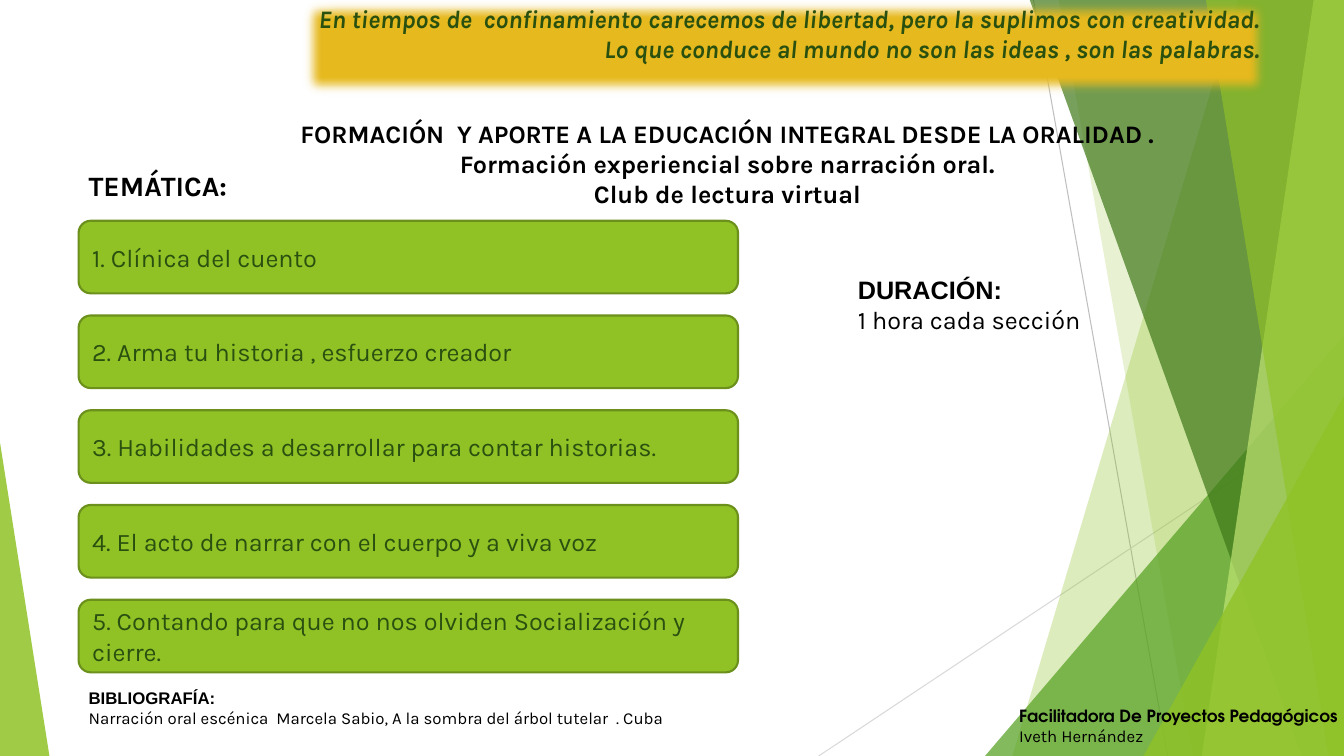
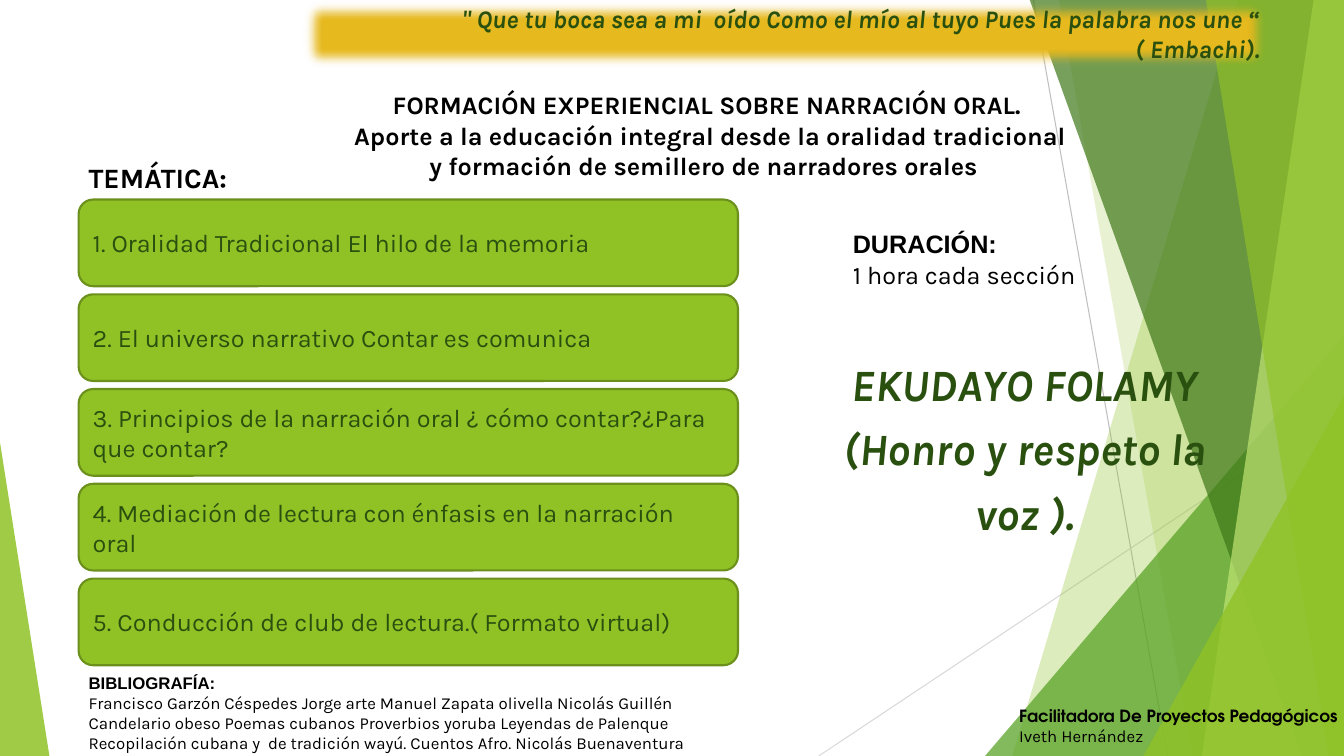
from lxml.etree import SubElement
from pptx import Presentation
from pptx.dml.color import RGBColor
from pptx.enum.shapes import MSO_CONNECTOR, MSO_SHAPE
from pptx.enum.text import MSO_ANCHOR, MSO_AUTO_SIZE, PP_ALIGN
from pptx.oxml.ns import qn
from pptx.util import Pt

PX = 9144  # EMU in one px, 100 px to the inch
WIDE, HIGH = 1333, 750

COLORS = {
    "lime": "90C226", "leaf": "54A021", "forest": "3F7819", "pale": "C0E474",
    "edge": "6B901C", "deep": "2A5010", "gold": "E6B91E", "white": "FFFFFF",
    "black": "000000", "gray": "BFBFBF", "mist": "D9D9D9",
}

STYLES = {
    "quote": {"name": "Karla", "size": Pt(18), "bold": True, "italic": True},
    "title": {"name": "Karla", "size": Pt(18), "bold": True},
    "topic": {"name": "Karla", "size": Pt(20), "bold": True},
    "item": {"name": "Karla", "size": Pt(18)},
    "motto": {"name": "Karla", "size": Pt(32), "bold": True, "italic": True},
    "head": {"name": "Arial", "size": Pt(18), "bold": True},
    "small": {"name": "Karla", "size": Pt(12)},
    "smallhead": {"name": "Arial", "size": Pt(12), "bold": True},
    "role": {"name": "TeX Gyre Adventor", "size": Pt(12), "bold": True},
}

# Straight lines: start, end, colour
LINES = [((1025, 0), (1158, 750), "gray"), ((1333, 403), (812, 750), "mist")]

# Panels reach the right edge: ("panel", top x, bottom x, colour, opacity)
# Wedges stand on the bottom edge: ("wedge", left, top, width, apex, colour, opacity)
FACETS = [
    ("panel", 1228, 1004, "lime", 30),
    ("panel", 1050, 1183, "lime", 20),
    ("wedge", 977, 333, 356, 1, "leaf", 72),
    ("panel", 1021, 1291, "forest", 70),
    ("panel", 1303, 1192, "pale", 70),
    ("panel", 1196, 1318, "lime", 65),
    ("wedge", 1134, 393, 199, 1, "lime", 80),
    ("wedge", 0, 439, 49, 0, "lime", 85),
]

SLIDES = [
    {
        "quote": ["En tiempos de  confinamiento carecemos de libertad, pero la suplimos con creatividad.",
                  "Lo que conduce al mundo no son las ideas , son las palabras."],
        "band": 98,
        "title": ["FORMACIÓN  Y APORTE A LA EDUCACIÓN INTEGRAL DESDE LA ORALIDAD .",
                  "Formación experiencial sobre narración oral.",
                  "Club de lectura virtual"],
        "title_at": (285, 112, 873, 101),
        "topic_top": 162,
        "items": ["1. Clínica del cuento",
                  "2. Arma tu historia , esfuerzo creador",
                  "3. Habilidades a desarrollar para contar historias.",
                  "4. El acto de narrar con el cuerpo y a viva voz",
                  "5. Contando para que no nos olviden Socialización y cierre."],
        "items_top": 219, "item_high": 72,
        "time_at": (841, 267, 285, 71),
        "books": "Narración oral escénica  Marcela Sabio, A la sombra del árbol tutelar  . Cuba",
        "books_at": (78, 677, 625, 50),
    },
    {
        "quote": ["\" Que tu boca sea a mi  oído Como el mío al tuyo Pues la palabra nos une “",
                  "( Embachi)."],
        "band": 72,
        "title": ["FORMACIÓN EXPERIENCIAL SOBRE NARRACIÓN ORAL.",
                  " Aporte a la educación integral desde la oralidad tradicional ",
                  "y formación de semillero de narradores orales "],
        "title_at": (335, 84, 732, 101),
        "topic_top": 154,
        "items": ["1. Oralidad Tradicional El hilo de la memoria",
                  "2. El universo narrativo Contar es comunica",
                  "3. Principios de la narración oral ¿ cómo contar?¿Para que contar?",
                  "4. Mediación de lectura con énfasis en la narración oral",
                  "5. Conducción de club de lectura.( Formato virtual)"],
        "items_top": 198, "item_high": 86,
        "time_at": (836, 222, 285, 71),
        "books": "Francisco Garzón Céspedes Jorge arte Manuel Zapata olivella Nicolás Guillén "
                 "Candelario obeso Poemas cubanos Proverbios yoruba Leyendas de Palenque "
                 "Recopilación cubana y  de tradición wayú. Cuentos Afro. Nicolás Buenaventura",
        "books_at": (78, 662, 625, 88),
        "motto": "EKUDAYO FOLAMY (Honro y respeto la voz ).",
    },
]
ITEM_LEFT, ITEM_WIDE, ITEM_STEP = 78, 654, 94


def rgb(color):
    return RGBColor.from_string(COLORS[color])


def emu(*values):
    return [v * PX for v in values]


def paint(shape, color, opacity=100, edge=None, weight=1):
    shape.shadow.inherit = False
    shape.fill.solid()
    shape.fill.fore_color.rgb = rgb(color)
    if opacity < 100:
        tone = shape.fill._xPr.find(qn("a:solidFill"))[0]
        SubElement(tone, qn("a:alpha")).set("val", str(opacity * 1000))
    if edge:
        shape.line.color.rgb = rgb(edge)
        shape.line.width = Pt(weight)
    else:
        shape.line.fill.background()


def write(shape, rows, color="black", align=PP_ALIGN.LEFT, anchor=MSO_ANCHOR.TOP, wrap=True):
    """Fill the shape with one paragraph for each (text, style) row."""
    frame = shape.text_frame
    frame.word_wrap = wrap
    frame.vertical_anchor = anchor
    for i, (text, style) in enumerate(rows):
        para = frame.paragraphs[0] if i == 0 else frame.add_paragraph()
        para.alignment = align
        run = para.add_run()
        run.text = text
        for key, value in STYLES[style].items():
            setattr(run.font, key, value)
        run.font.color.rgb = rgb(color)
    return frame


def label(slide, at, rows, **look):
    frame = write(slide.shapes.add_textbox(*emu(*at)), rows, **look)
    frame.auto_size = MSO_AUTO_SIZE.SHAPE_TO_FIT_TEXT
    return frame


def backdrop(slide):
    shapes = slide.shapes.add_group_shape().shapes
    for start, end, color in LINES:
        line = shapes.add_connector(MSO_CONNECTOR.STRAIGHT, *emu(*start, *end))
        line.line.color.rgb = rgb(color)
        line.line.width = Pt(0.75)
        SubElement(line._element.spPr, qn("a:effectLst"))
    for kind, *place, color, opacity in FACETS:
        if kind == "panel":
            top, base = place
            pen = shapes.build_freeform(top, -1, scale=PX)
            pen.add_line_segments([(WIDE, -1), (WIDE, HIGH), (base, HIGH)])
            facet = pen.convert_to_shape()
        else:
            left, top, wide, apex = place
            facet = shapes.add_shape(MSO_SHAPE.ISOSCELES_TRIANGLE,
                                     *emu(left, top, wide, HIGH - top))
            facet.adjustments[0] = apex
        paint(facet, color, opacity)


def banner(slide, lines, high):
    """Draw the gold band with soft edges and the quote on it."""
    band = slide.shapes.add_shape(MSO_SHAPE.RECTANGLE, *emu(298, -2, 961, high))
    paint(band, "gold", edge="white", weight=2)
    glow = band._element.spPr.find(qn("a:effectLst"))
    SubElement(glow, qn("a:softEdge")).set("rad", "112500")
    write(band, [(t, "quote") for t in lines], color="deep", align=PP_ALIGN.RIGHT)


def build(slide, data):
    backdrop(slide)
    label(slide, (1001, 695, 345, 50),
          [("Facilitadora De Proyectos Pedagógicos", "role"), ("Iveth Hernández", "small")])
    label(slide, data["time_at"], [("DURACIÓN:", "head"), ("1 hora cada sección", "item")])
    label(slide, data["books_at"], [("BIBLIOGRAFÍA:", "smallhead"), (data["books"], "small")])
    banner(slide, data["quote"], data["band"])
    for i, text in enumerate(data["items"]):
        box = slide.shapes.add_shape(
            MSO_SHAPE.ROUNDED_RECTANGLE,
            *emu(ITEM_LEFT, data["items_top"] + i * ITEM_STEP, ITEM_WIDE, data["item_high"]))
        paint(box, "lime", edge="edge", weight=1.5)
        write(box, [(text, "item")], color="deep", anchor=MSO_ANCHOR.MIDDLE)
    label(slide, data["title_at"], [(t, "title") for t in data["title"]],
          align=PP_ALIGN.CENTER, wrap=False)
    label(slide, (78, data["topic_top"], 162, 44), [("TEMÁTICA:", "topic")], wrap=False)
    if "motto" in data:
        box = slide.shapes.add_textbox(*emu(814, 338, 405, 216))
        para = write(box, [(data["motto"], "motto")], color="deep",
                     align=PP_ALIGN.CENTER).paragraphs[0]
        para.line_spacing = 1.2
        para.space_before = Pt(10)


def main():
    deck = Presentation()
    deck.slide_width, deck.slide_height = emu(WIDE, HIGH)
    for data in SLIDES:
        build(deck.slides.add_slide(deck.slide_layouts[6]), data)
    deck.save("out.pptx")


if __name__ == "__main__":
    main()
